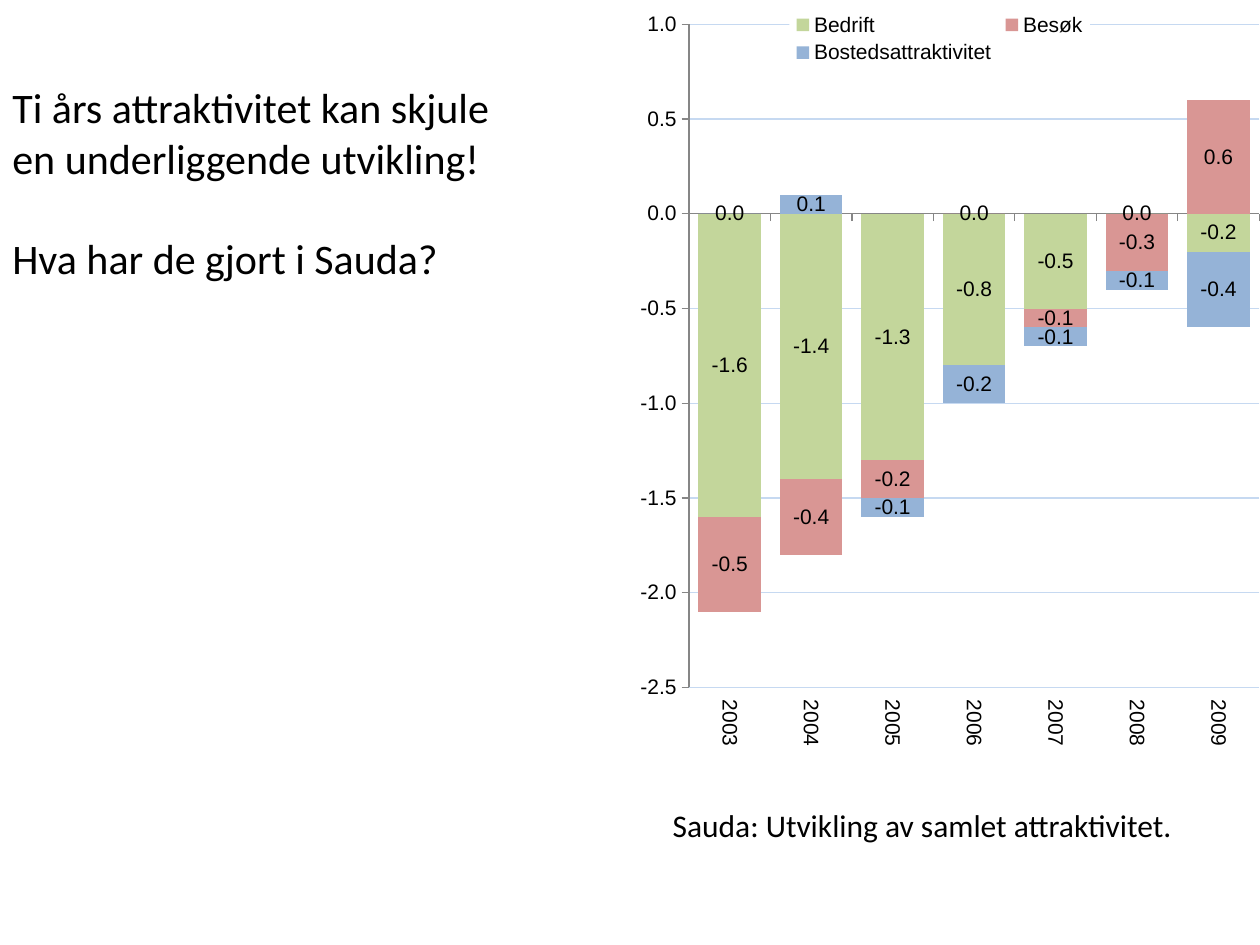
from lxml.etree import SubElement
from pptx import Presentation
from pptx.chart.data import CategoryChartData
from pptx.dml.color import RGBColor
from pptx.enum.chart import (
    XL_CHART_TYPE as ChartType,
    XL_LABEL_POSITION as LabelPosition,
    XL_LEGEND_POSITION as LegendPosition,
    XL_TICK_LABEL_POSITION as TickLabels,
    XL_TICK_MARK as TickMark,
)
from pptx.oxml import parse_xml
from pptx.oxml.ns import nsdecls, qn
from pptx.util import Inches, Pt

WIDTH, HEIGHT = Inches(10), Inches(7.5)
COLORS = {
    "text": "000000",
    "paper": "FFFFFF",
    "grid": "C6D9F1",
    "axis": "868686",
    "Bedrift": "C3D69B",
    "Besøk": "D99694",
    "Bostedsattraktivitet": "95B3D7",
}
YEARS = [str(year) for year in range(2003, 2010)]
ATTRACTIVENESS = {
    "Bedrift": (-1.6, -1.4, -1.3, -0.8, -0.5, 0.0, -0.2),
    "Besøk": (-0.5, -0.4, -0.2, 0.0, -0.1, -0.3, 0.6),
    "Bostedsattraktivitet": (0.0, 0.1, -0.1, -0.2, -0.1, -0.1, -0.4),
}
MESSAGE = (
    "Ti års attraktivitet kan skjule en underliggende utvikling!",
    "Hva har de gjort i Sauda?",
)
CAPTION = ("Sauda: Utvikling av samlet attraktivitet.",)
MESSAGE_PERCENT = (0, 8, 41.3, 28.3)
CHART_PERCENT = (49.2, 0, 50.8, 80.4)
CAPTION_PERCENT = (52.4, 84.6, 47.6, 5.3)
PLOT_PERCENT = (10.8, 3.2, 89.2, 87.3)
LEGEND_PERCENT = (26.5, 1.1, 47, 8)


def color(name):
    return RGBColor.from_string(COLORS[name])


def place(box):
    return [int(share * side / 100)
            for share, side in zip(box, (WIDTH, HEIGHT) * 2)]


def add_text(slide, box, lines, size, gap=0):
    frame = slide.shapes.add_textbox(*place(box)).text_frame
    frame.word_wrap = True
    for index, line in enumerate(lines):
        paragraph = frame.add_paragraph() if index else frame.paragraphs[0]
        paragraph.space_before = Pt(gap if index else 0)
        run = paragraph.add_run()
        run.text = line
        run.font.name = "Calibri"
        run.font.size = Pt(size)
        run.font.color.rgb = color("text")


def set_layout(parent, position, box, inner=False):
    for old in parent.findall(qn("c:layout")):
        parent.remove(old)
    layout = parse_xml(f"<c:layout {nsdecls('c')}/>")
    manual = SubElement(layout, qn("c:manualLayout"))
    settings = {"layoutTarget": "inner"} if inner else {}
    settings.update(xMode="edge", yMode="edge")
    settings.update(zip("xywh", (round(share / 100, 3) for share in box)))
    for tag, value in settings.items():
        SubElement(manual, qn(f"c:{tag}")).set("val", str(value))
    parent.insert(position, layout)


def style_axes(chart):
    years, values = chart.category_axis, chart.value_axis
    for axis in (years, values):
        axis.major_tick_mark = TickMark.OUTSIDE
        axis.minor_tick_mark = TickMark.NONE
        axis.format.line.color.rgb = color("axis")
        axis.format.line.width = Pt(0.75)
        axis.tick_labels.font.size = Pt(12)
    years.has_major_gridlines = False
    years.tick_label_position = TickLabels.LOW
    rotation = years._element.find(qn("c:txPr")).find(qn("a:bodyPr"))
    rotation.set("rot", "5400000")
    rotation.set("vert", "horz")
    values.minimum_scale, values.maximum_scale = -2.5, 1
    values.major_unit = 0.5
    values.tick_labels.number_format = "0.0"
    values.tick_labels.number_format_is_linked = False
    values.has_major_gridlines = True
    values.major_gridlines.format.line.color.rgb = color("grid")
    values.major_gridlines.format.line.width = Pt(0.75)


def style_legend(chart):
    chart.has_legend = True
    legend = chart.legend
    legend.position = LegendPosition.TOP
    legend.include_in_layout = True
    set_layout(legend._element, 1, LEGEND_PERCENT)
    legend._element.append(parse_xml(
        f"<c:spPr {nsdecls('c', 'a')}><a:solidFill>"
        f"<a:srgbClr val=\"{COLORS['paper']}\"/></a:solidFill></c:spPr>"))


def add_attractiveness_chart(slide, box):
    data = CategoryChartData(number_format="0.0")
    data.categories = YEARS
    for name, shares in ATTRACTIVENESS.items():
        data.add_series(name, shares)
    chart = slide.shapes.add_chart(
        ChartType.COLUMN_STACKED, *place(box), data).chart
    chart.has_title = False
    chart.font.name = "Arial"
    chart.font.size = Pt(12)
    chart.font.color.rgb = color("text")
    columns = chart.plots[0]
    columns.gap_width, columns.overlap = 30, 100
    columns.vary_by_categories = False
    for series in columns.series:
        series.invert_if_negative = False
        series.format.fill.solid()
        series.format.fill.fore_color.rgb = color(series.name)
        labels = series.data_labels
        labels.show_value = True
        labels.number_format = "0.0"
        labels.number_format_is_linked = False
        labels.position = LabelPosition.CENTER
    style_axes(chart)
    style_legend(chart)
    plot_area = chart._chartSpace.chart.plotArea
    set_layout(plot_area, 0, PLOT_PERCENT, inner=True)


def main():
    deck = Presentation()
    deck.slide_width, deck.slide_height = WIDTH, HEIGHT
    slide = deck.slides.add_slide(deck.slide_layouts[6])
    add_text(slide, CAPTION_PERCENT, CAPTION, 18)
    add_text(slide, MESSAGE_PERCENT, MESSAGE, 24, gap=28.5)
    add_attractiveness_chart(slide, CHART_PERCENT)
    deck.save("out.pptx")


if __name__ == "__main__":
    main()
